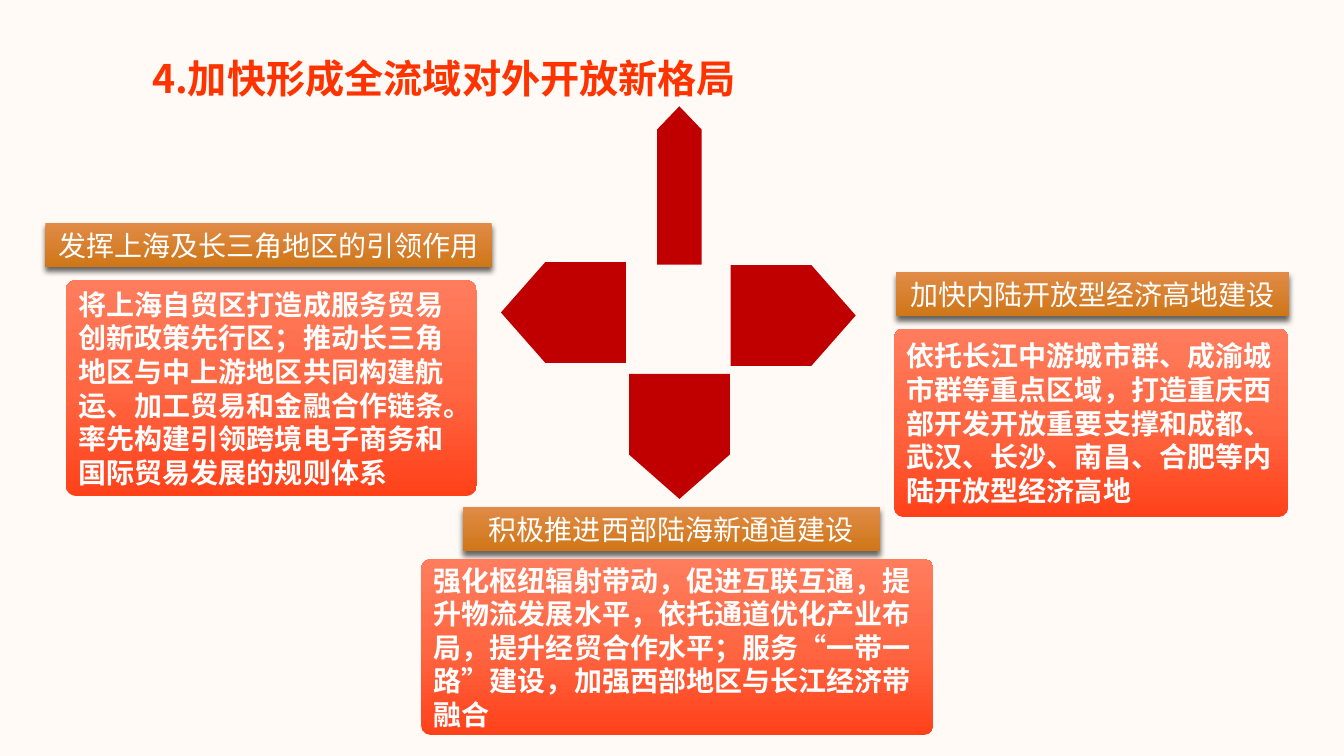
"""Build the slide on opening up the whole river basin, with four arrows and three topics."""
from copy import deepcopy
from dataclasses import dataclass

from lxml.etree import SubElement
from pptx import Presentation
from pptx.dml.color import RGBColor
from pptx.enum.shapes import MSO_SHAPE as Preset
from pptx.enum.text import MSO_ANCHOR as Anchor, PP_ALIGN as Align
from pptx.oxml.ns import qn
from pptx.util import Emu, Inches, Pt

FONT = "Noto Sans CJK SC"
COLORS = {
    "background": "FFFAF5",
    "title": "FF3300",
    "arrow": "C00000",
    "text": "FFFFFF",
    "shadow": "000000",
    "header_top": "E08B47",
    "header_bottom": "CF7617",
    "body_bottom": "FF411A",
    "body_middle": "FF6743",
    "body_top": "FF7D5D",
}
HEADER_STOPS = ("header_top", "header_bottom")
BODY_STOPS = ("body_bottom", "body_middle", "body_top")
DOWNWARD, UPWARD = 270, 90
HEADER_HEIGHT = 5.87


@dataclass(frozen=True)
class Area:
    left: float
    top: float
    width: float
    height: float


@dataclass(frozen=True)
class Arrow:
    center_x: float
    center_y: float
    rotation: int
    length: float = 9.3
    breadth: float = 13.33
    head: float = 0.44


@dataclass(frozen=True)
class Topic:
    header: str
    header_area: Area
    body: str
    body_area: Area


TITLE = "4.加快形成全流域对外开放新格局"
TITLE_AREA = Area(10.58, 3.33, 56.93, 10.8)

ARROWS = (
    Arrow(41.92, 41.33, 180),
    Arrow(59.02, 41.73, 0),
    Arrow(50.55, 57.73, 90),
    Arrow(50.55, 24.53, 270, 11.78, 5.87, 0.52),
)

TOPICS = (
    Topic(
        "积极推进西部陆海新通道建设",
        Area(34.42, 67.07, 31.05, HEADER_HEIGHT),
        "强化枢纽辐射带动，促进互联互通，提升物流发展水平，依托通道优化产业布局，"
        "提升经贸合作水平；服务“一带一路”建设，加强西部地区与长江经济带融合",
        Area(31.35, 74, 38.1, 23.2),
    ),
    Topic(
        "加快内陆开放型经济高地建设",
        Area(66.67, 36, 29.25, HEADER_HEIGHT),
        "依托长江中游城市群、成渝城市群等重点区域，打造重庆西部开发开放重要支撑和"
        "成都、武汉、长沙、南昌、合肥等内陆开放型经济高地",
        Area(66.52, 43.47, 29.32, 24.93),
    ),
    Topic(
        "发挥上海及长三角地区的引领作用",
        Area(3.37, 29.47, 33.22, HEADER_HEIGHT),
        "将上海自贸区打造成服务贸易创新政策先行区；推动长三角地区与中上游地区共同"
        "构建航运、加工贸易和金融合作链条。率先构建引领跨境电子商务和国际贸易发展的规则体系",
        Area(4.88, 37.07, 30.6, 28.53),
    ),
)

presentation = Presentation()
presentation.slide_width = Inches(13.33)
presentation.slide_height = Inches(7.5)


def color(name: str) -> RGBColor:
    return RGBColor.from_string(COLORS[name])


def across(share: float) -> Emu:
    return Emu(round(presentation.slide_width * share / 100))


def down(share: float) -> Emu:
    return Emu(round(presentation.slide_height * share / 100))


def place(area: Area) -> tuple[Emu, Emu, Emu, Emu]:
    return across(area.left), down(area.top), across(area.width), down(area.height)


def add_plain_shape(slide, preset: Preset, area: Area):
    shape = slide.shapes.add_shape(preset, *place(area))
    shape.shadow.inherit = False
    shape.line.fill.background()
    return shape


def fill_gradient(shape, names: tuple[str, ...], angle: int) -> None:
    fill = shape.fill
    fill.gradient()
    fill.gradient_angle = angle
    stop_list = shape.element.spPr.find(".//" + qn("a:gsLst"))
    for _ in names[2:]:
        stop_list.append(deepcopy(stop_list[0]))
    for index, (stop, name) in enumerate(zip(fill.gradient_stops, names)):
        stop.position = index / (len(names) - 1)
        stop.color.rgb = color(name)


def add_drop_shadow(shape) -> None:
    effects = shape.element.spPr.find(qn("a:effectLst"))
    shadow = SubElement(effects, qn("a:outerShdw"), blurRad=str(Pt(4)),
                        dist=str(Pt(3)), dir="5400000", rotWithShape="0")
    shade = SubElement(shadow, qn("a:srgbClr"), val=COLORS["shadow"])
    SubElement(shade, qn("a:alpha"), val="60000")


def write(shape, text: str, size: int, color_name: str, bold: bool,
          alignment: Align = Align.LEFT, spacing: float = 1.0) -> None:
    frame = shape.text_frame
    frame.word_wrap = True
    frame.vertical_anchor = Anchor.MIDDLE
    paragraph = frame.paragraphs[0]
    paragraph.alignment = alignment
    paragraph.line_spacing = spacing
    run = paragraph.add_run()
    run.text = text
    paragraph.font.size = Pt(size)
    paragraph.font.bold = bold
    paragraph.font.name = FONT
    paragraph.font.color.rgb = color(color_name)
    defaults = paragraph.font._element
    SubElement(defaults, qn("a:ea"), typeface=FONT)
    run._r.insert(0, deepcopy(defaults))
    run._r[0].tag = qn("a:rPr")


def add_arrow(slide, arrow: Arrow) -> None:
    area = Area(arrow.center_x - arrow.length / 2, arrow.center_y - arrow.breadth / 2,
                arrow.length, arrow.breadth)
    shape = add_plain_shape(slide, Preset.RIGHT_ARROW, area)
    shape.adjustments[0] = 1
    shape.adjustments[1] = arrow.head
    shape.rotation = arrow.rotation
    shape.fill.solid()
    shape.fill.fore_color.rgb = color("arrow")


def add_topic(slide, topic: Topic) -> None:
    header = add_plain_shape(slide, Preset.RECTANGLE, topic.header_area)
    fill_gradient(header, HEADER_STOPS, DOWNWARD)
    add_drop_shadow(header)
    write(header, topic.header, 20, "text", False, Align.CENTER)

    body = add_plain_shape(slide, Preset.ROUNDED_RECTANGLE, topic.body_area)
    body.adjustments[0] = 0.05
    fill_gradient(body, BODY_STOPS, UPWARD)
    write(body, topic.body, 20, "text", True)


def main() -> None:
    slide = presentation.slides.add_slide(presentation.slide_layouts[6])
    slide.background.fill.solid()
    slide.background.fill.fore_color.rgb = color("background")
    title = slide.shapes.add_textbox(*place(TITLE_AREA))
    write(title, TITLE, 28, "title", True, spacing=1.5)
    for arrow in ARROWS:
        add_arrow(slide, arrow)
    for topic in TOPICS:
        add_topic(slide, topic)
    presentation.save("out.pptx")


if __name__ == "__main__":
    main()
